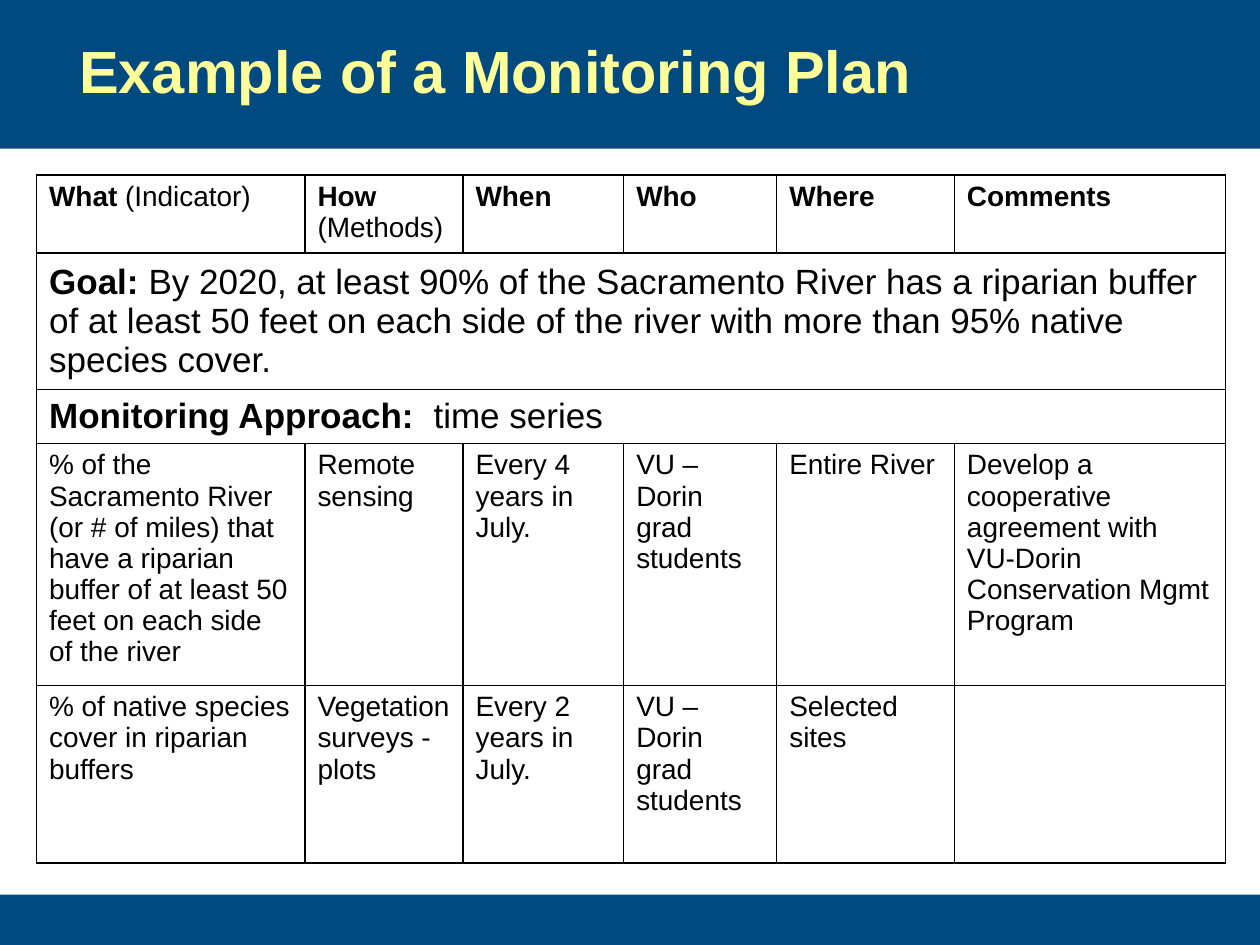
from lxml import etree
from pptx import Presentation, util as u
from pptx.dml.color import RGBColor
from pptx.enum import shapes, text
from pptx.oxml.ns import qn

BLUE = RGBColor(0x00, 0x4A, 0x80)
YELLOW = RGBColor(0xFF, 0xFF, 0x99)
BLACK = RGBColor(0x00, 0x00, 0x00)
WHITE = RGBColor(0xFF, 0xFF, 0xFF)

FONT = "Arial"
TITLE_SIZE, GOAL_SIZE, CELL_SIZE = 34, 20, 16
TITLE_ONLY_LAYOUT = 5

# Shares of the slide's width and height, in percent
COLUMN_WIDTHS = [21.3, 12.55, 12.75, 12.15, 14.1, 21.5]
ROW_HEIGHTS = [8.27, 14.4, 5.73, 25.6, 18.8]

# Each cell is a list of (text, bold) runs; a row with one cell spans the table
HEADERS = [
    [("What ", True), ("(Indicator)", False)],
    [("How", True), (" (Methods)", False)],
    *[[(name, True)] for name in ("When", "Who", "Where", "Comments")],
]
GOAL = [
    ("Goal: ", True),
    ("By 2020, at least 90% of the Sacramento River has a riparian buffer "
     "of at least 50 feet on each side of the river with more than 95% "
     "native species cover.", False),
]
APPROACH = [("Monitoring Approach:", True), ("  time series", False)]
INDICATORS = [
    ["% of the Sacramento River (or # of miles) that have a riparian buffer "
     "of at least 50 feet on each side of the river",
     "Remote sensing", "Every 4 years in July.", "VU – Dorin grad students",
     "Entire River",
     "Develop a cooperative agreement with VU-Dorin Conservation Mgmt Program"],
    ["% of native species cover in riparian buffers",
     "Vegetation surveys - plots", "Every 2 years in July.",
     "VU – Dorin grad students", "Selected sites", ""],
]
ROWS = [HEADERS, [GOAL], [APPROACH]] + [
    [[(entry, False)] if entry else [] for entry in row] for row in INDICATORS
]


class SlideBuilder:
    def __init__(self, presentation):
        self.width = presentation.slide_width
        self.height = presentation.slide_height
        layout = presentation.slide_layouts[TITLE_ONLY_LAYOUT]
        self.slide = presentation.slides.add_slide(layout)
        background = self.slide.background.fill
        background.solid()
        background.fore_color.rgb = WHITE

    def across(self, percent):
        return u.Emu(round(self.width * percent / 100))

    def down(self, percent):
        return u.Emu(round(self.height * percent / 100))

    def band(self, top, height):
        """Draw a blue bar over the full width of the slide."""
        shape = self.slide.shapes.add_shape(
            shapes.MSO_SHAPE.RECTANGLE,
            0, self.down(top), self.width, self.down(height))
        shape.shadow.inherit = False
        shape.fill.solid()
        shape.fill.fore_color.rgb = BLUE
        shape.line.fill.background()

    def runs(self, paragraph, parts, size, color):
        paragraph.alignment = text.PP_ALIGN.LEFT
        for words, bold in parts:
            run = paragraph.add_run()
            run.text = words
            run.font.name = FONT
            run.font.size = u.Pt(size)
            run.font.bold = bold
            run.font.color.rgb = color

    def title(self, words, left, top, width, height):
        shape = self.slide.shapes.title
        shape.left, shape.top = self.across(left), self.down(top)
        shape.width, shape.height = self.across(width), self.down(height)
        frame = shape.text_frame
        frame.word_wrap = True
        frame.vertical_anchor = text.MSO_ANCHOR.MIDDLE
        self.runs(frame.paragraphs[0], [(words, True)], TITLE_SIZE, YELLOW)
        # Bring the title in front of the bands
        shape.element.getparent().append(shape.element)

    def cell_style(self, cell):
        """Give a cell thin black borders on all sides and a white fill."""
        properties = cell._tc.get_or_add_tcPr()
        for side in ("lnL", "lnR", "lnT", "lnB"):
            line = etree.SubElement(properties, qn(f"a:{side}"), w=str(u.Pt(1)))
            fill = etree.SubElement(line, qn("a:solidFill"))
            etree.SubElement(fill, qn("a:srgbClr"), val=str(BLACK))
        cell.fill.solid()
        cell.fill.fore_color.rgb = WHITE

    def table(self, rows, left, top):
        table = self.slide.shapes.add_table(
            len(ROW_HEIGHTS), len(COLUMN_WIDTHS),
            self.across(left), self.down(top),
            self.across(sum(COLUMN_WIDTHS)), self.down(sum(ROW_HEIGHTS))).table
        for column, width in zip(table.columns, COLUMN_WIDTHS):
            column.width = self.across(width)
        for row, height in zip(table.rows, ROW_HEIGHTS):
            row.height = self.down(height)
        for cell in table.iter_cells():
            self.cell_style(cell)
        for index, entries in enumerate(rows):
            spans = len(entries) == 1
            if spans:
                last = table.cell(index, len(COLUMN_WIDTHS) - 1)
                table.cell(index, 0).merge(last)
            for position, parts in enumerate(entries):
                cell = table.cell(index, position)
                if spans:
                    cell.vertical_anchor = text.MSO_ANCHOR.MIDDLE
                self.runs(cell.text_frame.paragraphs[0], parts,
                          GOAL_SIZE if spans else CELL_SIZE, BLACK)


def main():
    presentation = Presentation()
    presentation.slide_width = u.Inches(10)
    presentation.slide_height = u.Inches(7.5)
    builder = SlideBuilder(presentation)
    builder.band(top=94.67, height=5.33)
    builder.band(top=0, height=15.73)
    builder.title("Example of a Monitoring Plan",
                  left=5.3, top=0.27, width=90.8, height=14.27)
    builder.table(ROWS, left=2.9, top=18.53)
    presentation.save("out.pptx")


if __name__ == "__main__":
    main()
